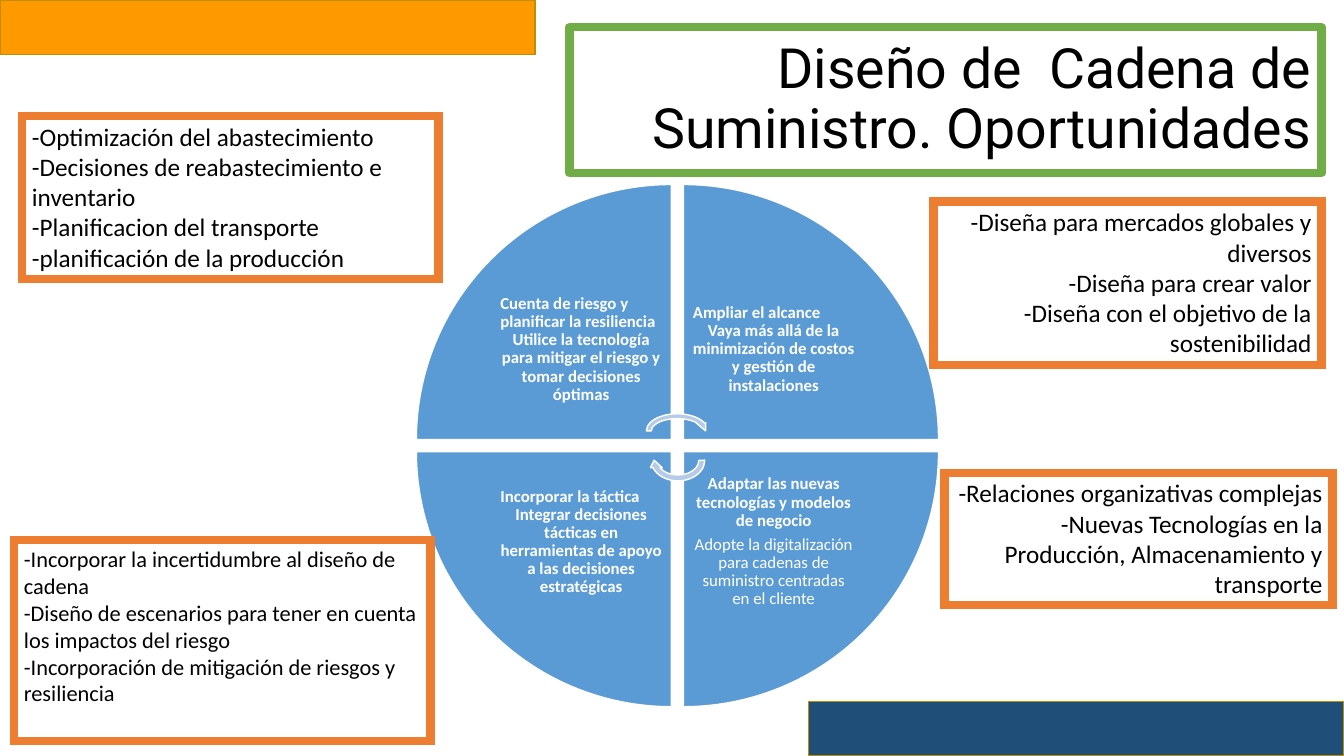
import pptx
import pptx.util
import pptx.dml.color
import pptx.enum.shapes
import pptx.enum.text
import lxml.etree

Pt = pptx.util.Pt
RGB = pptx.dml.color.RGBColor
SHAPE = pptx.enum.shapes.MSO_SHAPE
ALIGN = pptx.enum.text.PP_ALIGN
ANCHOR = pptx.enum.text.MSO_ANCHOR

WHITE = RGB(0xFF, 0xFF, 0xFF)
BLACK = RGB(0, 0, 0)
GREEN = RGB(0x70, 0xAD, 0x47)
ORANGE = RGB(0xED, 0x7D, 0x31)
AMBER = RGB(0xFF, 0x99, 0x00)
GOLD = RGB(0xBD, 0x8E, 0x00)
NAVY = RGB(0x1F, 0x4E, 0x79)
BLUE = RGB(0x5B, 0x9B, 0xD5)
PALE = RGB(0xB5, 0xCB, 0xE7)

TITLE = "Diseño de  Cadena de Suministro. Oportunidades"

# Clockwise from top left: (text, alignment, bold, space after)
WEDGES = [
    [("Cuenta de riesgo y planificar la resiliencia", ALIGN.LEFT, True, 0),
     ("Utilice la tecnología para mitigar el riesgo y tomar decisiones óptimas",
      ALIGN.CENTER, True, 0)],
    [("Ampliar el alcance", ALIGN.LEFT, True, 0),
     ("Vaya más allá de la minimización de costos y gestión de instalaciones",
      ALIGN.CENTER, True, 0)],
    [("Adaptar las nuevas tecnologías y modelos de negocio",
      ALIGN.CENTER, True, 4.2),
     ("Adopte la digitalización para cadenas de suministro centradas en el cliente",
      ALIGN.CENTER, False, 0)],
    [("Incorporar la táctica", ALIGN.LEFT, True, 0),
     ("Integrar decisiones tácticas en herramientas de apoyo a las decisiones "
      "estratégicas", ALIGN.CENTER, True, 0)],
]

# (left, top, width, height), size, alignment, lines
NOTES = [
    ((666.7, 144, 277.2, 116.6), 18, ALIGN.RIGHT, [
        "-Diseña para mercados globales y diversos",
        "-Diseña para crear valor",
        "-Diseña con el objetivo de la sostenibilidad"]),
    ((15.8, 82.8, 297.4, 116.6), 18, ALIGN.LEFT, [
        "-Optimización del abastecimiento",
        "-Decisiones de reabastecimiento e inventario",
        "-Planificacion del transporte",
        "-planificación de la producción"]),
    ((10, 385.9, 297.4, 143.3), 16, ALIGN.LEFT, [
        "-Incorporar la incertidumbre al diseño de cadena",
        "-Diseño de escenarios para tener en cuenta los impactos del riesgo",
        "-Incorporación de mitigación de riesgos y resiliencia"]),
    ((674.6, 337.7, 277.2, 94.3), 18, ALIGN.RIGHT, [
        "-Relaciones organizativas complejas",
        "-Nuevas Tecnologías en la Producción, Almacenamiento y transporte"]),
]

ARROWS = [((460, 293.8, 47.5, 28), 0), ((463, 311.8, 42.5, 33.8), 180)]
BARS = [((0, 0, 382.3, 38.9), AMBER), ((577.7, 501.1, 382.3, 38.9), NAVY)]

LEFT, TOP = 297.4, 131.8   # corner of the wheel
SIDE, STEP = 182.2, 190.8  # wedge side, and distance between wedges
INNER = 128.9              # side of the text square in a wedge


def draw(kind, box, fill, edge, width, turn=0):
    item = slide.shapes.add_shape(kind, *map(Pt, box))
    item.shadow.inherit = False
    item.fill.solid()
    item.fill.fore_color.rgb = fill
    item.line.color.rgb = edge
    item.line.width = Pt(width)
    item.rotation = turn
    return item


def write(par, text, size, color, align, bold=False, font="Calibri"):
    par.alignment = align
    run = par.add_run()
    run.text = text
    run.font.name = font
    run.font.size = Pt(size)
    run.font.bold = bold
    run.font.color.rgb = color


def next_par(frame, index):
    return frame.add_paragraph() if index else frame.paragraphs[0]


def miter(item):
    """Give the outline sharp corners."""
    line = item.line._get_or_add_ln()
    join = lxml.etree.SubElement(line, pptx.oxml.ns.qn("a:miter"))
    join.set("lim", "800000")


deck = pptx.Presentation()
deck.slide_width, deck.slide_height = Pt(960), Pt(540)
slide = deck.slides.add_slide(deck.slide_layouts[5])

title = slide.shapes.title
title.left, title.top, title.width, title.height = map(
    Pt, (406.8, 19.4, 537.1, 104.4))
title.line.color.rgb = GREEN
title.line.width = Pt(6)
frame = title.text_frame
frame.auto_size = pptx.enum.text.MSO_AUTO_SIZE.NONE
frame.word_wrap = True
frame.vertical_anchor = ANCHOR.MIDDLE
frame.paragraphs[0].line_spacing = 0.9
write(frame.paragraphs[0], TITLE, 39.6, BLACK, ALIGN.RIGHT, font="Roboto")

for turn, parts in enumerate(WEDGES):
    col, row = int(turn in (1, 2)), turn // 2
    x, y = LEFT + col * STEP, TOP + row * STEP
    draw(SHAPE.PIE_WEDGE, (x, y, SIDE, SIDE), BLUE, WHITE, 1, 90 * turn)
    x += (1 - col) * (SIDE - INNER)
    y += (1 - row) * (SIDE - INNER)
    label = slide.shapes.add_textbox(*map(Pt, (x, y, INNER, INNER)))
    frame = label.text_frame
    frame.word_wrap = True
    frame.vertical_anchor = ANCHOR.MIDDLE
    frame.margin_left = frame.margin_right = Pt(6.7)
    frame.margin_top = frame.margin_bottom = Pt(6.7)
    for index, (text, align, bold, after) in enumerate(parts):
        par = next_par(frame, index)
        par.line_spacing = 0.9
        par.space_after = Pt(after)
        write(par, text, 12, WHITE, align, bold)

for box, turn in ARROWS:
    draw(SHAPE.CIRCULAR_ARROW, box, PALE, WHITE, 1, turn)

for box, fill in BARS:
    draw(SHAPE.RECTANGLE, box, fill, GOLD, 1)

for box, size, align, lines in NOTES:
    note = draw(SHAPE.RECTANGLE, box, WHITE, ORANGE, 6)
    miter(note)
    frame = note.text_frame
    frame.word_wrap = True
    frame.vertical_anchor = ANCHOR.TOP
    for index, text in enumerate(lines):
        write(next_par(frame, index), text, size, BLACK, align)

deck.save("out.pptx")
